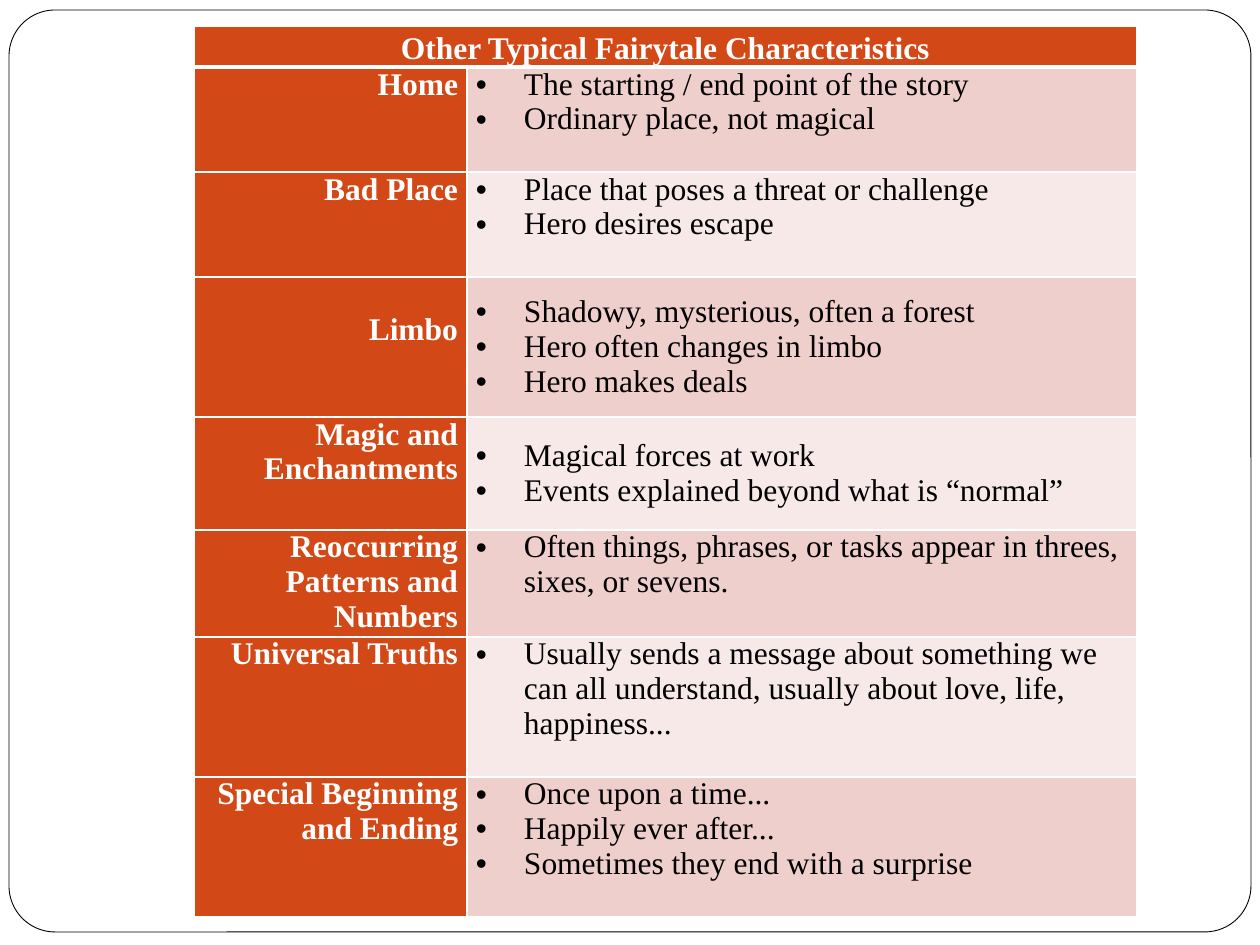
import dataclasses
import typing

import pptx
import pptx.dml.color
import pptx.enum.shapes
import pptx.enum.text
import pptx.oxml
import pptx.oxml.ns
import pptx.util

PX = pptx.util.Inches(1) / 126
COLORS = {
    "white": "FFFFFF",
    "black": "000000",
    "orange": "D34817",
    "rose": "EFCFCC",
    "pale rose": "F7E9E8",
}
ALIGN = pptx.enum.text.PP_ALIGN
ANCHOR = pptx.enum.text.MSO_ANCHOR

HEADING = "Other Typical Fairytale Characteristics"
HEADING_HEIGHT = 41
COLUMN_WIDTHS = (273, 670)
BULLET_INDENT = 48


@dataclasses.dataclass(frozen=True)
class Characteristic:
    name: str
    points: tuple[str, ...]
    height: int
    anchor: typing.Any = ANCHOR.TOP
    name_offset: int = 0


CHARACTERISTICS = (
    Characteristic("Home", (
        "The starting / end point of the story",
        "Ordinary place, not magical"), 105),
    Characteristic("Bad Place", (
        "Place that poses a threat or challenge",
        "Hero desires escape"), 105),
    Characteristic("Limbo", (
        "Shadowy, mysterious, often a forest",
        "Hero often changes in limbo",
        "Hero makes deals"), 140, ANCHOR.MIDDLE, 35),
    Characteristic("Magic and Enchantments", (
        "Magical forces at work",
        "Events explained beyond what is “normal”"), 113, ANCHOR.MIDDLE),
    Characteristic("Reoccurring Patterns and Numbers", (
        "Often things, phrases, or tasks appear in threes, sixes, or sevens.",), 107),
    Characteristic("Universal Truths", (
        "Usually sends a message about something we can all understand, "
        "usually about love, life, happiness...",), 140),
    Characteristic("Special Beginning and Ending", (
        "Once upon a time...",
        "Happily ever after...",
        "Sometimes they end with a surprise"), 140),
)


def emu(px: int) -> int:
    return round(px * PX)


def rgb(color: str) -> pptx.dml.color.RGBColor:
    return pptx.dml.color.RGBColor.from_string(COLORS[color])


def set_borders(cell, bottom_width: int = 1) -> None:
    properties = cell._tc.get_or_add_tcPr()
    for position, side in enumerate("LRTB"):
        width = pptx.util.Pt(bottom_width if side == "B" else 1)
        properties.insert(position, pptx.oxml.parse_xml(
            f'<a:ln{side} {pptx.oxml.ns.nsdecls("a")} w="{width}"><a:solidFill>'
            f'<a:srgbClr val="{COLORS["white"]}"/></a:solidFill></a:ln{side}>'))


def add_bullet(paragraph) -> None:
    properties = paragraph._p.get_or_add_pPr()
    properties.set("marL", str(emu(BULLET_INDENT)))
    properties.set("indent", str(-emu(BULLET_INDENT)))
    for xml in ('<a:buFont {} typeface="Arial"/>', '<a:buChar {} char="•"/>'):
        properties.append(pptx.oxml.parse_xml(xml.format(pptx.oxml.ns.nsdecls("a"))))


def fill_cell(cell, lines: tuple[str, ...], fill: str, color: str, bold: bool,
              align, anchor=ANCHOR.TOP, top: int = 0, bulleted: bool = False,
              line_spacing: float = 1.0, bottom_border: int = 1) -> None:
    layout = {
        "margin_left": emu(9),
        "margin_right": emu(9),
        "margin_top": emu(top),
        "margin_bottom": 0,
        "vertical_anchor": anchor,
    }
    for attribute, value in layout.items():
        setattr(cell, attribute, value)
    cell.fill.solid()
    cell.fill.fore_color.rgb = rgb(fill)
    set_borders(cell, bottom_border)

    lettering = {"name": "Times New Roman", "size": pptx.util.Pt(18), "bold": bold}
    cell.text = "\n".join(lines)
    for paragraph in cell.text_frame.paragraphs:
        paragraph.alignment = align
        paragraph.line_spacing = line_spacing
        if bulleted:
            add_bullet(paragraph)
        font = paragraph.runs[0].font
        for attribute, value in lettering.items():
            setattr(font, attribute, value)
        font.color.rgb = rgb(color)


def add_frame(slide) -> None:
    frame = slide.shapes.add_shape(
        pptx.enum.shapes.MSO_SHAPE.ROUNDED_RECTANGLE,
        emu(9), emu(10), emu(1242), emu(922))
    frame.adjustments[0] = 0.05
    frame.shadow.inherit = False
    frame.fill.solid()
    frame.fill.fore_color.rgb = rgb("white")
    frame.line.color.rgb = rgb("black")
    frame.line.width = pptx.util.Pt(0.5)


def add_characteristics(slide) -> None:
    heights = [HEADING_HEIGHT] + [item.height for item in CHARACTERISTICS]
    table = slide.shapes.add_table(
        len(heights), len(COLUMN_WIDTHS), emu(194), emu(26),
        emu(sum(COLUMN_WIDTHS)), emu(sum(heights))).table
    for column, width in zip(table.columns, COLUMN_WIDTHS):
        column.width = emu(width)
    for row, height in zip(table.rows, heights):
        row.height = emu(height)

    # Heading across both columns
    table.cell(0, 0).merge(table.cell(0, 1))
    fill_cell(table.cell(0, 0), (HEADING,), "orange", "white", True,
              ALIGN.CENTER, line_spacing=1.15, bottom_border=3)

    # Names on the left, banded bullet points on the right
    for row, item in enumerate(CHARACTERISTICS, start=1):
        fill_cell(table.cell(row, 0), (item.name,), "orange", "white", True,
                  ALIGN.RIGHT, top=item.name_offset)
        fill_cell(table.cell(row, 1), item.points,
                  "rose" if row % 2 else "pale rose", "black", False,
                  ALIGN.LEFT, anchor=item.anchor, bulleted=True)


def main() -> None:
    presentation = pptx.Presentation()
    presentation.slide_width = emu(1260)
    presentation.slide_height = emu(945)
    slide = presentation.slides.add_slide(presentation.slide_layouts[6])
    slide.background.fill.solid()
    slide.background.fill.fore_color.rgb = rgb("white")
    add_frame(slide)
    add_characteristics(slide)
    presentation.save("out.pptx")


if __name__ == "__main__":
    main()
